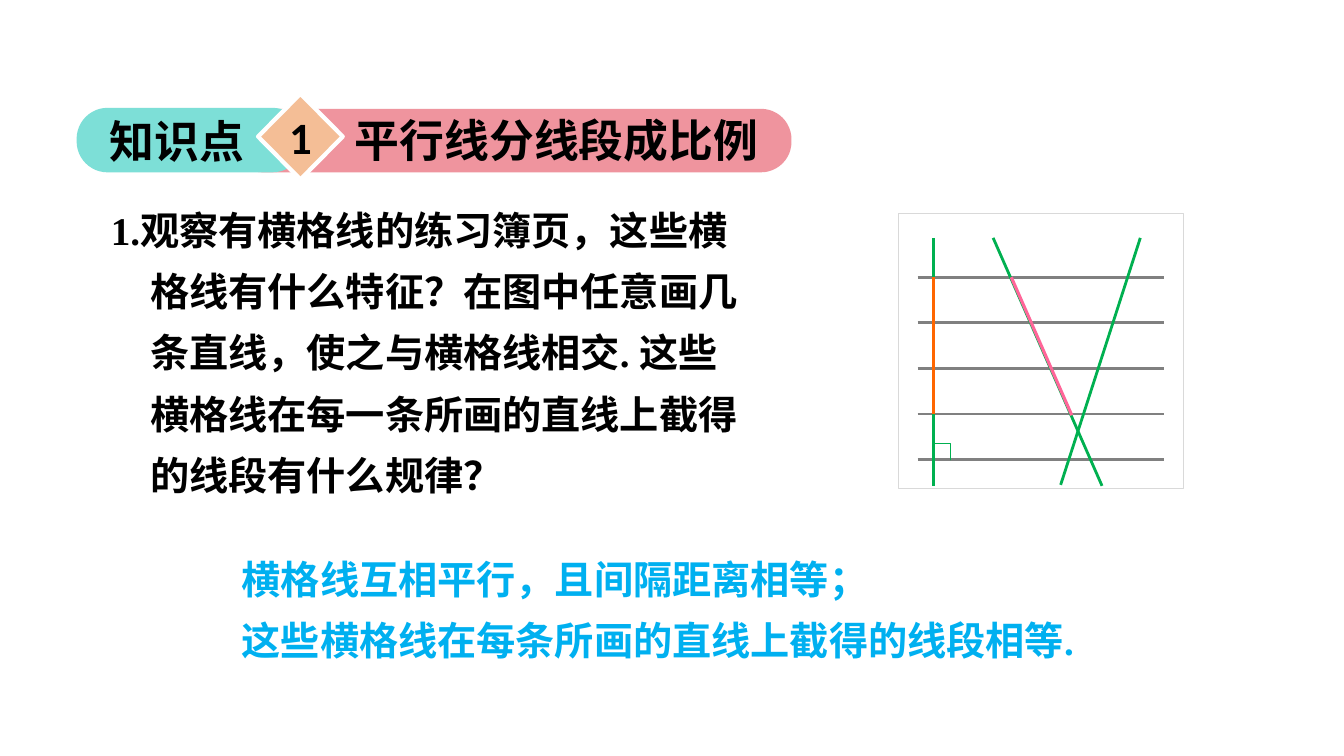
"""Build the slide on parallel lines that cut segments in proportion."""
from lxml.etree import SubElement
from pptx import Presentation
from pptx.dml.color import RGBColor
from pptx.enum.shapes import MSO_CONNECTOR, MSO_SHAPE as SHAPE
from pptx.enum.text import MSO_ANCHOR as ANCHOR, MSO_AUTO_SIZE as AUTO_SIZE, PP_ALIGN as ALIGN
from pptx.oxml.ns import qn
from pptx.util import Pt

PX = 9144
BLACK, WHITE, BLUE, GREEN = "000000", "FFFFFF", "00B0F0", "00B050"
GRAY, ORANGE, PINK = "808080", "FF6600", "FF6699"
SANS, SERIF = "Noto Sans CJK SC", "Times New Roman"

BANNERS = [((230, 108, 555, 63), "EF949E"), ((76, 107, 225, 64), "7DDFD7")]
TITLES = [((99, 108, 159, 64), "知识点", False), ((342, 107, 427, 64), "平行线分线段成比例", True)]
BADGE = (256, 93, 84, 85)
QUESTION = [
    "1.观察有横格线的练习簿页，这些横格线有什么特征？在图中任意画几条直线，"
    "使之与横格线相交. 这些横格线在每一条所画的直线上截得的线段有什么规律？"
]
ANSWERS = ["横格线互相平行，且间隔距离相等；", "这些横格线在每条所画的直线上截得的线段相等."]

PAGE = (891, 212, 283, 273)
RULE_LEFT, RULE_RIGHT, RULE_TOP, RULE_BOTTOM, RULE_COUNT = 910, 1154, 275, 456, 5
DRAWN_LINES = [((985, 236), (1093, 482)), ((926, 236), (926, 482)), ((1131, 236), (1052, 481))]
RIGHT_ANGLE = (927, 440, 16, 16)
CUT_SEGMENTS = [((926, 275), (926, 411), ORANGE), ((1003, 275), (1063, 412), PINK)]
CUT_COUNT = 3


def emu(*lengths):
    return [round(length * PX) for length in lengths]


def rgb(color):
    return RGBColor.from_string(color)


def add_shape(shapes, kind, box, fill, line=None, width=1):
    shape = shapes.add_shape(kind, *emu(*box))
    shape.shadow.inherit = False
    shape.fill.solid()
    shape.fill.fore_color.rgb = rgb(fill)
    if line:
        shape.line.color.rgb = rgb(line)
        shape.line.width = Pt(width)
    else:
        shape.line.fill.background()
    return shape


def add_line(shapes, start, end, color, width):
    line = shapes.add_connector(MSO_CONNECTOR.STRAIGHT, *emu(*start, *end))
    line.line.color.rgb = rgb(color)
    line.line.width = Pt(width)
    SubElement(line._element.spPr, qn("a:effectLst"))


def add_run(paragraph, text, size, font, color):
    run = paragraph.add_run()
    run.text = text
    run.font.size = Pt(size)
    run.font.bold = True
    run.font.name = font
    run.font.color.rgb = rgb(color)
    SubElement(run._r.get_or_add_rPr(), qn("a:ea")).set("typeface", SANS)


def add_text(shapes, box, lines, size, font, color, wrap=True, spacing=None, hanging=0):
    frame = shapes.add_textbox(*emu(*box)).text_frame
    frame.word_wrap = wrap
    frame.auto_size = AUTO_SIZE.SHAPE_TO_FIT_TEXT
    for index, line in enumerate(lines):
        paragraph = frame.add_paragraph() if index else frame.paragraphs[0]
        paragraph.line_spacing = spacing
        if hanging:
            properties = paragraph._p.get_or_add_pPr()
            properties.set("marL", str(hanging * PX))
            properties.set("indent", str(-hanging * PX))
        add_run(paragraph, line, size, font, color)


def add_heading(shapes):
    for box, fill in BANNERS:
        add_shape(shapes, SHAPE.ROUNDED_RECTANGLE, box, fill).adjustments[0] = 0.48
    for box, title, wrap in TITLES:
        add_text(shapes, box, [title], 32, SANS, BLACK, wrap)
    frame = add_shape(shapes, SHAPE.DIAMOND, BADGE, "F4BE96", WHITE, 3).text_frame
    frame.word_wrap = False
    frame.vertical_anchor = ANCHOR.MIDDLE
    frame.paragraphs[0].alignment = ALIGN.CENTER
    add_run(frame.paragraphs[0], "1", 32, "Calibri", BLACK)


def add_figure(shapes):
    ruled_page = shapes.add_group_shape().shapes
    add_shape(ruled_page, SHAPE.RECTANGLE, PAGE, WHITE, "D9D9D9")
    rule_gap = (RULE_BOTTOM - RULE_TOP) / (RULE_COUNT - 1)
    for index in range(RULE_COUNT):
        y = RULE_TOP + index * rule_gap
        add_line(ruled_page, (RULE_LEFT, y), (RULE_RIGHT, y), GRAY, 2)
    for start, end in DRAWN_LINES:
        add_line(shapes, start, end, GREEN, 2)
    corner = add_shape(shapes, SHAPE.HALF_FRAME, RIGHT_ANGLE, "4874CB", GREEN)
    corner.rotation = 90
    corner.adjustments[0] = corner.adjustments[1] = 0
    for (left, top), (right, bottom), color in CUT_SEGMENTS:
        step_x, step_y = (right - left) / CUT_COUNT, (bottom - top) / CUT_COUNT
        points = [(left + i * step_x, top + i * step_y) for i in range(CUT_COUNT + 1)]
        for start, end in zip(points, points[1:]):
            add_line(shapes, start, end, color, 2.25)


def main():
    presentation = Presentation()
    presentation.slide_width, presentation.slide_height = emu(1333, 750)
    slide = presentation.slides.add_slide(presentation.slide_layouts[6])
    add_heading(slide.shapes)
    add_text(slide.shapes, (100, 186, 645, 310), QUESTION, 28, SERIF, BLACK, spacing=1.3, hanging=39)
    add_text(slide.shapes, (230, 532, 944, 126), ANSWERS, 28, SERIF, BLUE, spacing=1.3)
    add_figure(slide.shapes)
    presentation.save("out.pptx")


if __name__ == "__main__":
    main()
